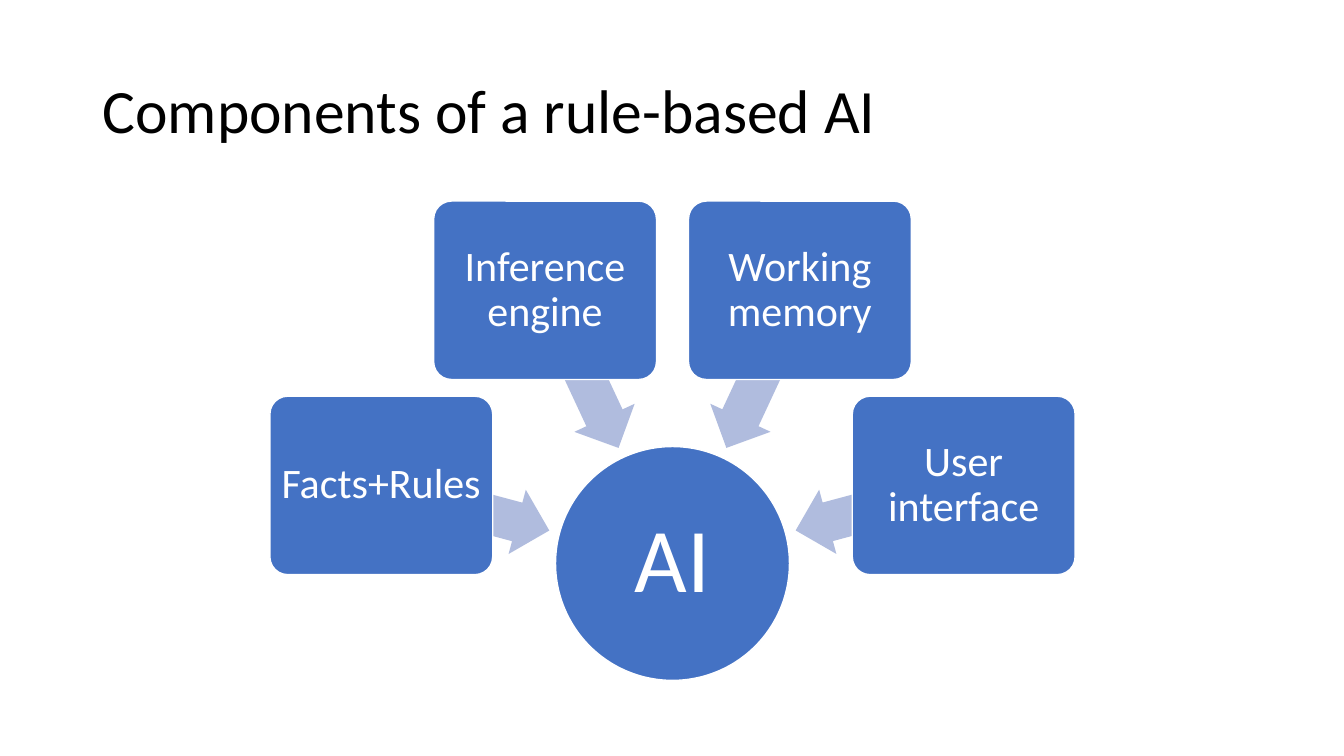
from math import cos, radians, sin

from pptx import Presentation
from pptx.dml.color import RGBColor
from pptx.enum.shapes import MSO_SHAPE
from pptx.enum.text import MSO_ANCHOR, PP_ALIGN
from pptx.util import Inches, Pt

OVAL = MSO_SHAPE.OVAL
ROUNDED = MSO_SHAPE.ROUNDED_RECTANGLE
LEFT_ARROW = MSO_SHAPE.LEFT_ARROW
MIDDLE = MSO_ANCHOR.MIDDLE
LEFT, CENTER = PP_ALIGN.LEFT, PP_ALIGN.CENTER

FONT = "Calibri"
COLORS = {"black": "000000", "white": "FFFFFF", "blue": "4472C4", "arrow": "B0BCDE"}

HUB_X, HUB_Y, HUB_SIZE = 6.67, 5.59, 2.32
BOX_RADIUS, BOX_W, BOX_H = 2.99, 2.21, 1.77
ARROW_RADIUS, ARROW_W, ARROW_H = 2.13, 1.73, 0.66
FIRST_ANGLE, ANGLE_STEP = 15, 50
COMPONENTS = ["Facts+Rules", "Inference engine", "Working memory", "User interface"]


def color(name):
    return RGBColor.from_string(COLORS[name])


def write(sp, text, size, color_name, align):
    tf = sp.text_frame
    tf.word_wrap = True
    tf.vertical_anchor = MIDDLE
    tf.text = text
    p = tf.paragraphs[0]
    p.alignment = align
    p.line_spacing = 0.9
    font = p.runs[0].font
    font.name, font.size = FONT, Pt(size)
    font.color.rgb = color(color_name)


def add_title(s, text):
    sp = s.shapes.add_textbox(Inches(0.92), Inches(0.4), Inches(11.5), Inches(1.45))
    write(sp, text, 44, "black", LEFT)


def add_centred(s, kind, x, y, w, h, fill):
    """Add a plain filled shape whose centre is at x, y."""
    sp = s.shapes.add_shape(kind, Inches(x - w / 2), Inches(y - h / 2), Inches(w), Inches(h))
    sp.shadow.inherit = False
    sp.fill.solid()
    sp.fill.fore_color.rgb = color(fill)
    sp.line.fill.background()
    return sp


def add_node(s, kind, x, y, w, h, text, size):
    sp = add_centred(s, kind, x, y, w, h, "blue")
    sp.line.color.rgb = color("white")
    sp.line.width = Pt(1)
    tf = sp.text_frame
    tf.margin_left = tf.margin_right = tf.margin_top = tf.margin_bottom = Inches(0.05)
    write(sp, text, size, "white", CENTER)
    return sp


def around_hub(radius, angle):
    """Return the point at an angle measured clockwise from the hub's left."""
    return HUB_X - radius * cos(radians(angle)), HUB_Y - radius * sin(radians(angle))


def add_component(s, text, angle):
    x, y = around_hub(ARROW_RADIUS, angle)
    arrow = add_centred(s, LEFT_ARROW, x, y, ARROW_W, ARROW_H, "arrow")
    arrow.adjustments[0], arrow.adjustments[1] = 0.6, 0.5
    arrow.rotation = 180 + angle

    x, y = around_hub(BOX_RADIUS, angle)
    box = add_node(s, ROUNDED, x, y, BOX_W, BOX_H, text, 30)
    box.adjustments[0] = 0.1


def main():
    prs = Presentation()
    prs.slide_width, prs.slide_height = Inches(13.33), Inches(7.5)
    s = prs.slides.add_slide(prs.slide_layouts[6])
    add_title(s, "Components of a rule-based AI")
    add_node(s, OVAL, HUB_X, HUB_Y, HUB_SIZE, HUB_SIZE, "AI", 65)
    for i, text in enumerate(COMPONENTS):
        add_component(s, text, FIRST_ANGLE + i * ANGLE_STEP)
    prs.save("out.pptx")


if __name__ == "__main__":
    main()
